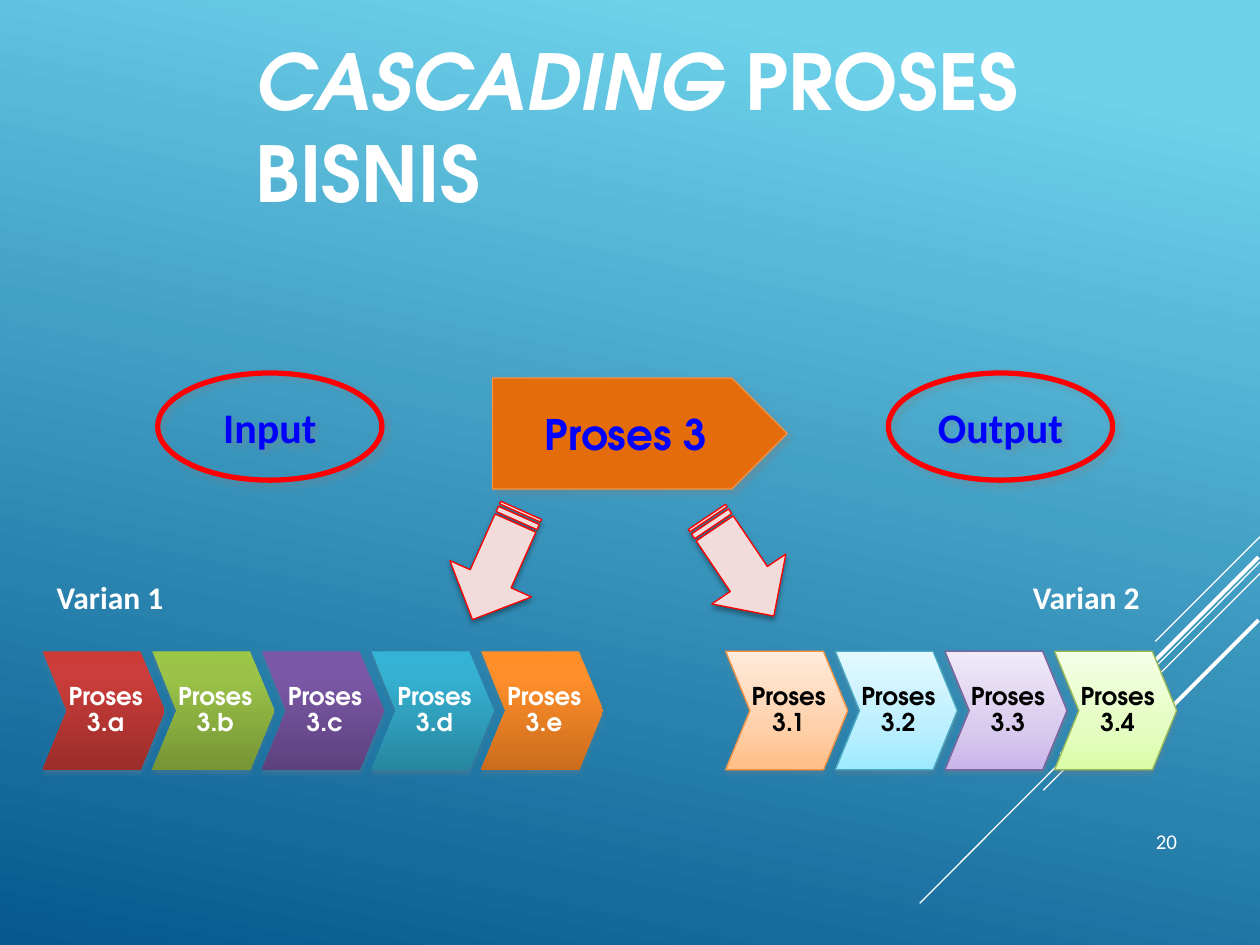
import pptx
import pptx.util
import pptx.dml.color
import pptx.enum.shapes
import pptx.enum.text
import copy
import lxml.etree

Cm = pptx.util.Cm
Pt = pptx.util.Pt
rgb = pptx.dml.color.RGBColor.from_string
PRESET = pptx.enum.shapes.MSO_SHAPE
ALIGN = pptx.enum.text.PP_ALIGN
ANCHOR = pptx.enum.text.MSO_ANCHOR
DRAWING = "{http://schemas.openxmlformats.org/drawingml/2006/main}"
HEADING, BODY = "TeX Gyre Adventor", "Calibri"


def finish(shape, gradient=None, clockwise=90, shadow=None):
    if gradient:
        shape.fill.gradient()
        shape.fill.gradient_angle = 360 - clockwise
        first = shape.fill.gradient_stops[0]._gs
        while len(shape.fill.gradient_stops) < len(gradient):
            first.addnext(copy.deepcopy(first))
        for stop, (position, color) in zip(shape.fill.gradient_stops, gradient):
            stop.position = position / 100
            stop.color.rgb = rgb(color)
    if shadow:
        color, opacity, blur, distance, angle = shadow
        shape.shadow.inherit = False
        effects = shape._element.spPr.find(DRAWING + "effectLst")
        outer = lxml.etree.SubElement(
            effects, DRAWING + "outerShdw", blurRad=str(Pt(blur)), dist=str(Pt(distance)),
            dir=str(angle * 60000), algn="ctr", rotWithShape="0")
        tint = lxml.etree.SubElement(outer, DRAWING + "srgbClr", val=color)
        lxml.etree.SubElement(tint, DRAWING + "alpha", val=str(opacity * 1000))


def write(shape, text, size, font, color, align, anchor):
    shape.text_frame.word_wrap = True
    shape.text_frame.vertical_anchor = anchor
    paragraph = shape.text_frame.paragraphs[0]
    paragraph.text = text
    paragraph.alignment = align
    paragraph.font.size = Pt(size)
    paragraph.font.name = font
    paragraph.font.bold = True
    paragraph.font.color.rgb = rgb(color)
    return paragraph


deck = pptx.Presentation()
deck.slide_width, deck.slide_height = Cm(25.4), Cm(19.05)
slide = deck.slides.add_slide(deck.slide_layouts[5])
shapes = slide.shapes
finish(slide.background, [(10, "6ED2EB"), (100, "06588E")], 102)

for x1, y1, x2, y2, weight in [
    (25.4, 10.82, 23.29, 12.93, 0.75),
    (25.4, 11.33, 18.54, 18.21, 0.75),
    (25.4, 11.56, 21.03, 15.93, 0.75),
    (25.37, 11.23, 21.39, 15.21, 2.25),
    (25.37, 12.5, 22.48, 15.39, 2.25),
]:
    ray = shapes.add_connector(pptx.enum.shapes.MSO_CONNECTOR.STRAIGHT, Cm(x1), Cm(y1), Cm(x2), Cm(y2))
    ray.line.color.rgb = rgb("FFFFFF")
    ray.line.width = Pt(weight)
    lxml.etree.SubElement(ray._element.spPr, DRAWING + "effectLst")

title = shapes.title
title.left, title.top, title.width, title.height = Cm(4.9), Cm(0.94), Cm(20.5), Cm(3.18)
title.text_frame.auto_size = pptx.enum.text.MSO_AUTO_SIZE.NONE
heading = write(title, "CASCADING", 44, HEADING, "FFFFFF", ALIGN.LEFT, ANCHOR.MIDDLE)
heading.runs[0].font.italic = True
heading.add_run().text = " PROSES BISNIS"

page_number = shapes.add_textbox(Cm(21.59), Cm(15.49), Cm(2.39), Cm(1.85))
write(page_number, "20", 12, BODY, "FFFFFF", ALIGN.RIGHT, ANCHOR.BOTTOM).font.bold = False

main_shadow = ("808080", 40, 4, 3, 45)
process = shapes.add_shape(PRESET.PENTAGON, Cm(9.93), Cm(7.62), Cm(5.94), Cm(2.24))
process.fill.solid()
process.fill.fore_color.rgb = rgb("E46C0A")
process.line.color.rgb = rgb("F69240")
process.line.width = Pt(0.75)
finish(process, shadow=main_shadow)
write(process, "Proses 3", 24, HEADING, "0000FF", ALIGN.CENTER, ANCHOR.MIDDLE)

for label, left in [("Input", 3.18), ("Output", 17.91)]:
    oval = shapes.add_shape(PRESET.OVAL, Cm(left), Cm(7.52), Cm(4.52), Cm(2.16))
    oval.fill.background()
    oval.line.color.rgb = rgb("FF0000")
    oval.line.width = Pt(3)
    finish(oval, shadow=main_shadow)
    write(oval, label, 24, BODY, "0000FF", ALIGN.CENTER, ANCHOR.MIDDLE)

variant_1 = [
    ("3.a", ("CE3B37", "CB3D3A", "9B2D2A"), None),
    ("3.b", ("9CC746", "9BC348", "769535"), None),
    ("3.c", ("7B57A8", "7B58A6", "5D417E"), None),
    ("3.d", ("34B3D6", "36B1D2", "2787A0"), None),
    ("3.e", ("FF8F26", "FF8F2A", "CB6C1D"), None),
]
variant_2 = [
    ("3.1", ("FFEBDB", "FFD0AA", "FFBE86"), "F69240"),
    ("3.2", ("E4F9FF", "BBEFFF", "9EEAFF"), "46AAC5"),
    ("3.3", ("F0EAF9", "D9CBEE", "C9B5E8"), "7D60A0"),
    ("3.4", ("F5FFE6", "E4FDC2", "DAFDA7"), "98B954"),
]
top, width, height, point, pitch = 13.13, 2.46, 2.39, 0.49, 2.21
for start, middle_stop, text_color, shadow, steps in [
    (0.86, 20, "FFFFFF", ("808080", 35, 3.1, 1.8, 90), variant_1),
    (14.63, 65, "000000", ("808080", 38, 3.1, 1.6, 90), variant_2),
]:
    for index, (number, colors, edge) in enumerate(steps):
        left = start + index * pitch
        outline = shapes.build_freeform(Cm(left), Cm(top))
        outline.add_line_segments([
            (Cm(left + x), Cm(top + y)) for x, y in [
                (width - point, 0), (width, height / 2), (width - point, height),
                (0, height), (point, height / 2)]])
        step = outline.convert_to_shape()
        finish(step, list(zip((0, middle_stop, 100), colors)), shadow=shadow)
        if edge:
            step.line.color.rgb = rgb(edge)
            step.line.width = Pt(0.75)
        else:
            step.line.fill.background()
        caption = write(step, "Proses " + number, 14, HEADING, text_color, ALIGN.CENTER, ANCHOR.MIDDLE)
        caption.line_spacing = 0.9
        caption.space_after = Pt(5)
        frame = step.text_frame
        frame.margin_left, frame.margin_right = Cm(0.51), Cm(0.43)
        frame.margin_top = frame.margin_bottom = Cm(0.03)

for label, left in [("Varian 1", 0.89), ("Varian 2", 20.57)]:
    variant = shapes.add_textbox(Cm(left), Cm(11.53), Cm(2.72), Cm(1.02))
    write(variant, label, 18, BODY, "FFFFFF", ALIGN.LEFT, ANCHOR.TOP)
    variant.text_frame.word_wrap = False
    variant.text_frame.auto_size = pptx.enum.text.MSO_AUTO_SIZE.SHAPE_TO_FIT_TEXT

for left, top, angle in [(8.81, 10.49, 114), (13.72, 10.52, 56)]:
    arrow = shapes.add_shape(PRESET.STRIPED_RIGHT_ARROW, Cm(left), Cm(top), Cm(2.41), Cm(1.8))
    arrow.rotation = angle
    arrow.fill.solid()
    arrow.fill.fore_color.rgb = rgb("F2DCDB")
    arrow.line.color.rgb = rgb("FF0000")
    arrow.line.width = Pt(0.75)
    finish(arrow, shadow=("000000", 35, 3.1, 1.8, 90))

deck.save("out.pptx")
